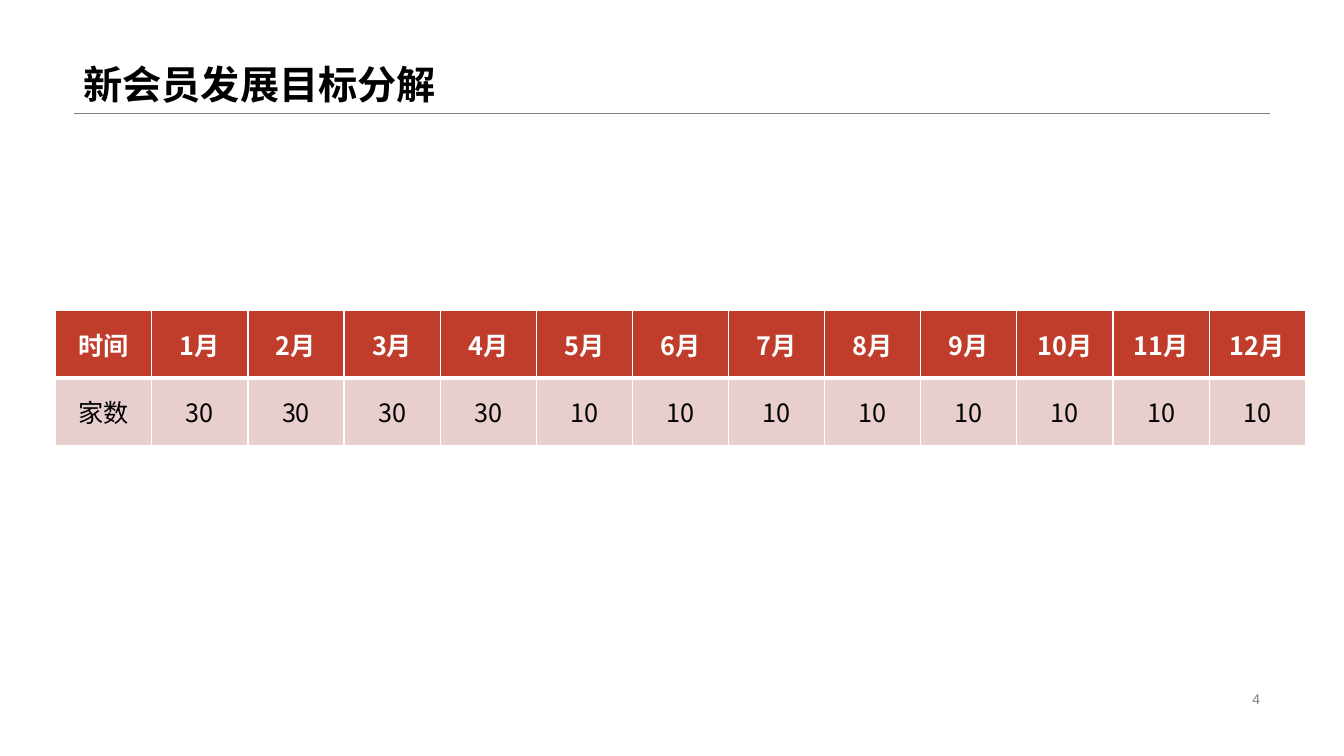
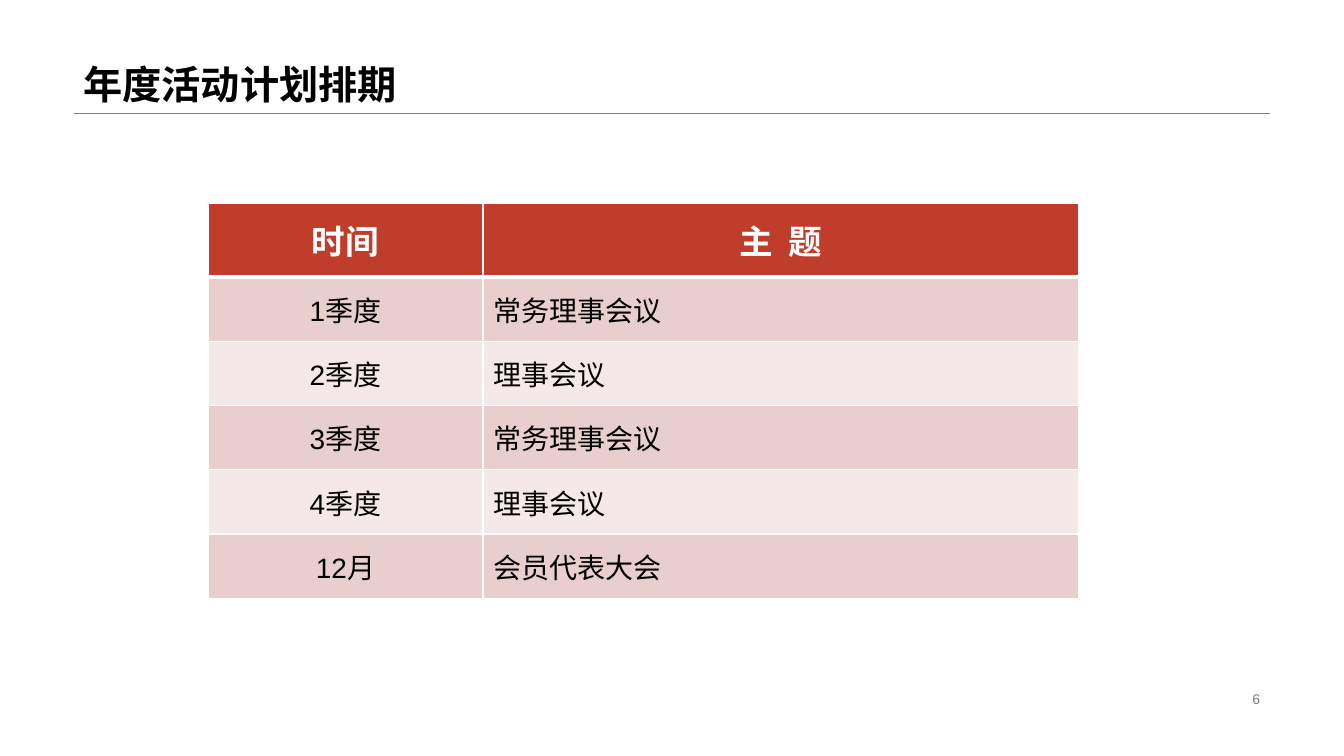
from collections import namedtuple
from dataclasses import dataclass

from lxml import etree
from pptx import Presentation
from pptx.dml.color import RGBColor
from pptx.enum.shapes import MSO_CONNECTOR as Connector
from pptx.enum.text import MSO_ANCHOR as Anchor, PP_ALIGN as Align
from pptx.oxml.ns import qn
from pptx.util import Pt

Box = namedtuple("Box", "left top width height")


@dataclass(frozen=True)
class Theme:
    black: str = "000000"
    white: str = "FFFFFF"
    gray: str = "808080"
    red: str = "C03D2B"
    bands: tuple = ("E8CECD", "F4E8E8")
    latin: str = "Arial"
    chinese: str = "Noto Sans CJK SC"
    title_size: float = 28
    number_size: float = 10
    rule_width: float = 0.25
    grid_width: float = 1
    header_edge: float = 3


@dataclass(frozen=True)
class TableStyle:
    font: str
    header_size: float
    body_size: float
    aligns: tuple


THEME = Theme()
PAGE = Box(0, 0, 960, 540)
TITLE = Box(52.6, 0, 854.6, 80.6)
NUMBER = Box(678.2, 491, 229, 16.6)


def points(*values):
    return [Pt(value) for value in values]


def write(frame, text, size, color, font=THEME.latin, bold=False,
          align=Align.LEFT, spacing=None):
    para = frame.paragraphs[0]
    para.alignment = align
    if spacing:
        para.line_spacing = spacing
    span = para.add_run()
    span.text = text
    span.font.size = Pt(size)
    span.font.bold = bold
    span.font.name = font
    span.font.color.rgb = RGBColor.from_string(color)
    east_asian = etree.SubElement(span.font._element, qn("a:ea"))
    east_asian.set("typeface", THEME.chinese)


def add_text(page, box, text, anchor, **style):
    frame = page.shapes.add_textbox(*points(*box)).text_frame
    frame.word_wrap = True
    frame.vertical_anchor = anchor
    write(frame, text, **style)


def add_title(page, box, text):
    """Place the title above the rule that runs along the bottom of its box."""
    bottom = box.top + box.height
    rule = page.shapes.add_connector(
        Connector.STRAIGHT,
        *points(box.left, bottom, box.left + box.width, bottom))
    rule.line.width = Pt(THEME.rule_width)
    rule.line.color.rgb = RGBColor.from_string(THEME.gray)
    etree.SubElement(rule._element.spPr, qn("a:effectLst"))
    add_text(page, box, text, Anchor.BOTTOM, size=THEME.title_size,
             color=THEME.black, bold=True, spacing=0.9)


def set_borders(cell, bottom_width):
    properties = cell._tc.get_or_add_tcPr()
    for side in "LRTB":
        width = bottom_width if side == "B" else THEME.grid_width
        line = etree.SubElement(properties, qn(f"a:ln{side}"), w=str(Pt(width)))
        fill = etree.SubElement(line, qn("a:solidFill"))
        etree.SubElement(fill, qn("a:srgbClr"), val=THEME.white)


def fill_cell(cell, text, row, align, style):
    header = row == 0
    set_borders(cell, THEME.header_edge if header else THEME.grid_width)
    color = THEME.red if header else THEME.bands[(row - 1) % len(THEME.bands)]
    cell.fill.solid()
    cell.fill.fore_color.rgb = RGBColor.from_string(color)
    cell.vertical_anchor = Anchor.MIDDLE
    write(cell.text_frame, text,
          size=style.header_size if header else style.body_size,
          color=THEME.white if header else THEME.black,
          font=style.font, bold=header,
          align=Align.CENTER if header else align)


def add_grid(page, box, rows, style, first_column, header_height):
    """Share the room beside the first column and below the header equally."""
    row_count, column_count = len(rows), len(rows[0])
    table = page.shapes.add_table(row_count, column_count, *points(*box)).table
    other_column = (box.width - first_column) / (column_count - 1)
    body_height = (box.height - header_height) / (row_count - 1)
    for index, column in enumerate(table.columns):
        column.width = Pt(other_column if index else first_column)
    for index, texts in enumerate(rows):
        table.rows[index].height = Pt(body_height if index else header_height)
        for place, (text, align) in enumerate(zip(texts, style.aligns)):
            fill_cell(table.cell(index, place), text, index, align, style)


def add_page(deck, title, number):
    page = deck.slides.add_slide(deck.slide_layouts[6])
    add_title(page, TITLE, title)
    add_text(page, NUMBER, str(number), Anchor.MIDDLE, size=THEME.number_size,
             color=THEME.gray, align=Align.RIGHT)
    return page


def add_member_targets(deck):
    page = add_page(deck, "新会员发展目标分解", 4)
    targets = [30] * 4 + [10] * 8
    rows = [
        ["时间"] + [f"{month}月" for month in range(1, len(targets) + 1)],
        ["家数"] + [str(target) for target in targets],
    ]
    style = TableStyle(THEME.chinese, 18, 18, (Align.CENTER,) * len(rows[0]))
    box = Box(39.8, 221.8, 892.8, 96.4)
    add_grid(page, box, rows, style, box.width / len(rows[0]), box.height / 2)


def add_activity_plan(deck):
    page = add_page(deck, "年度活动计划排期", 6)
    rows = [
        ("时间", "主  题"),
        ("1季度", "常务理事会议"),
        ("2季度", "理事会议"),
        ("3季度", "常务理事会议"),
        ("4季度", "理事会议"),
        ("12月", "会员代表大会"),
    ]
    style = TableStyle(THEME.latin, 24, 20, (Align.CENTER, Align.LEFT))
    add_grid(page, Box(148.6, 145.4, 622, 282), rows, style, 196.4, 52.6)


def main():
    deck = Presentation()
    deck.slide_width, deck.slide_height = points(PAGE.width, PAGE.height)
    add_member_targets(deck)
    add_activity_plan(deck)
    deck.save("out.pptx")


if __name__ == "__main__":
    main()
